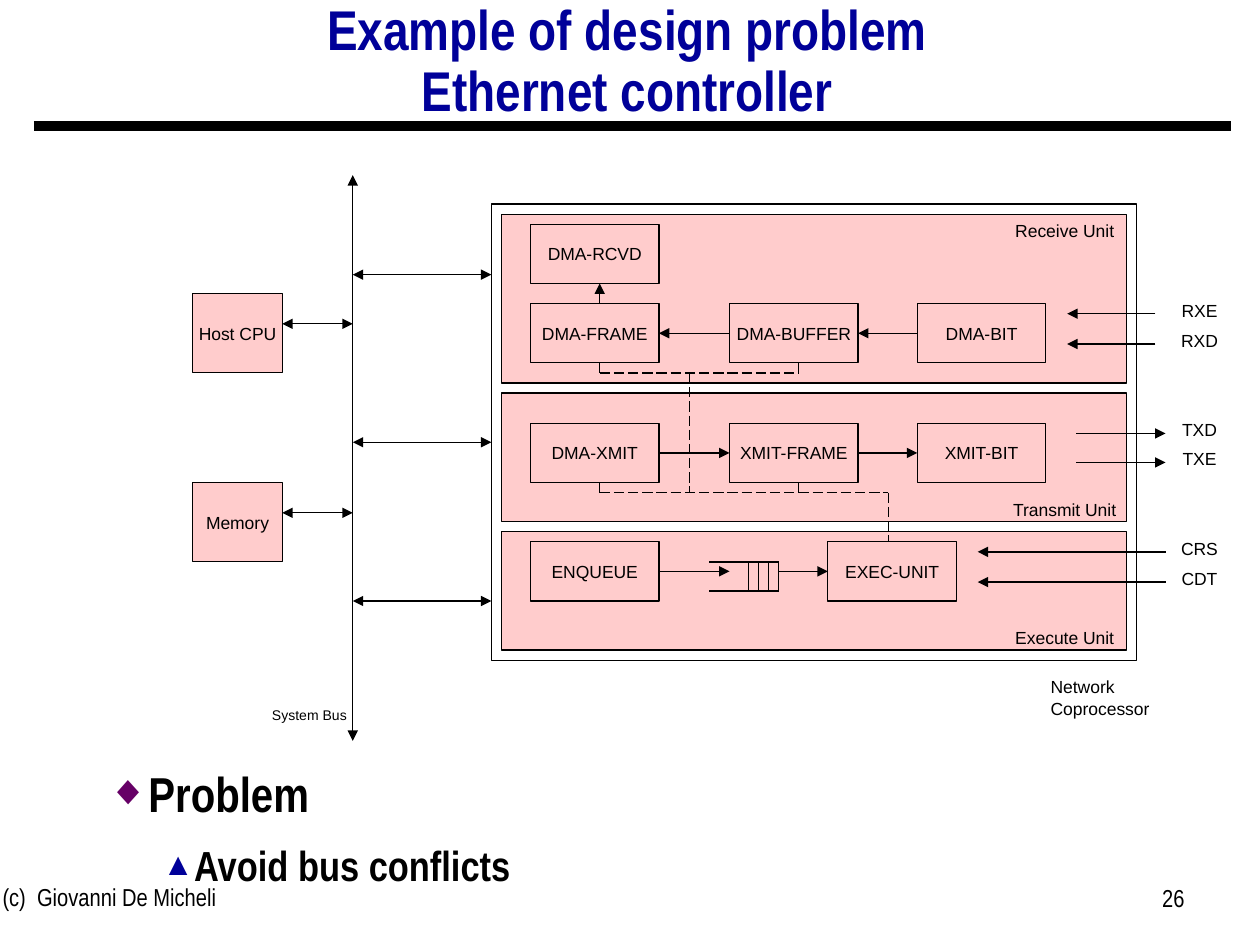
from lxml import etree
from pptx import Presentation
from pptx.dml.color import RGBColor
from pptx.enum.dml import MSO_LINE
from pptx.enum.shapes import MSO_CONNECTOR, MSO_SHAPE
from pptx.enum.text import MSO_ANCHOR, MSO_AUTO_SIZE, PP_ALIGN
from pptx.oxml.ns import qn
from pptx.util import Inches, Pt

LEFT, CENTER, RIGHT = PP_ALIGN.LEFT, PP_ALIGN.CENTER, PP_ALIGN.RIGHT
TOP, MIDDLE = MSO_ANCHOR.TOP, MSO_ANCHOR.MIDDLE
BLACK, NAVY, PURPLE, PINK = "000000", "000099", "660066", "FFCCCC"

TITLE = "Example of design problem\vEthernet controller"
BULLETS = [  # text, level, size, line spacing, space before, margin, hang, mark, mark colour, mark %
    ("Problem", 0, 28, 1.25, 8.4, 0.31, 0.31, "◆", PURPLE, 85),
    ("Avoid bus conflicts", 1, 24, 1.1, 7.2, 0.69, 0.25, "▲", NAVY, 75),
]

COPROCESSOR = (3.9, 1.62, 5.12, 3.62)
UNIT_LEFT, UNIT_WIDTH = 3.98, 4.96
UNITS = [  # name, top, height, label top
    ("Receive Unit", 1.7, 1.34, 1.7),
    ("Transmit Unit", 3.12, 1.02, 3.91),
    ("Execute Unit", 4.22, 0.94, 4.93),
]
COLUMNS = [4.21, 5.79, 7.28]
EXEC_LEFT = 6.57
BLOCK_WIDTH, BLOCK_HEIGHT = 1.02, 0.47
RECEIVE_ROW, TRANSMIT_ROW, EXECUTE_ROW = 2.41, 3.36, 4.3
BLOCKS = {
    "DMA-RCVD": (COLUMNS[0], 1.78),
    "DMA-FRAME": (COLUMNS[0], RECEIVE_ROW),
    "DMA-BUFFER": (COLUMNS[1], RECEIVE_ROW),
    "DMA-BIT": (COLUMNS[2], RECEIVE_ROW),
    "DMA-XMIT": (COLUMNS[0], TRANSMIT_ROW),
    "XMIT-FRAME": (COLUMNS[1], TRANSMIT_ROW),
    "XMIT-BIT": (COLUMNS[2], TRANSMIT_ROW),
    "ENQUEUE": (COLUMNS[0], EXECUTE_ROW),
    "EXEC-UNIT": (EXEC_LEFT, EXECUTE_ROW),
}
FLOWS = [("DMA-BUFFER", "DMA-FRAME"), ("DMA-BIT", "DMA-BUFFER"),
         ("DMA-XMIT", "XMIT-FRAME"), ("XMIT-FRAME", "XMIT-BIT")]
HOSTS = {"Host CPU": 2.33, "Memory": 3.83}
HOST_LEFT, HOST_WIDTH, HOST_HEIGHT = 1.53, 0.71, 0.63
BUS_X, BUS_TOP, BUS_BOTTOM = 2.8, 1.39, 5.88
BUS_TAPS = [2.18, 3.51, 4.77]
SIGNALS = [  # name, y, arrow start, arrow end
    ("RXE", 2.49, 9.17, 8.47), ("RXD", 2.73, 9.17, 8.47),
    ("TXD", 3.44, 8.54, 9.25), ("TXE", 3.67, 8.54, 9.25),
    ("CRS", 4.38, 9.25, 7.76), ("CDT", 4.62, 9.25, 7.76),
]
QUEUE_LEFT, QUEUE_RIGHT, QUEUE_TOP, QUEUE_BOTTOM = 5.63, 6.18, 4.46, 4.69
SLOT_WIDTH, SLOT_BARS = 0.08, 4
PORT_OFFSET, CONTROL_GAP = 0.55, 0.08

deck = Presentation()
deck.slide_width, deck.slide_height = Inches(10), Inches(7.5)
page = deck.slides.add_slide(deck.slide_layouts[1])


def color(value):
    return RGBColor.from_string(value)


def place(shape, left, top, width, height):
    for name, value in dict(left=left, top=top, width=width, height=height).items():
        setattr(shape, name, Inches(value))


def set_frame(frame, anchor=TOP, across=0.1, down=0.05):
    settings = dict(word_wrap=True, auto_size=MSO_AUTO_SIZE.NONE, vertical_anchor=anchor,
                    margin_left=Inches(across), margin_right=Inches(across),
                    margin_top=Inches(down), margin_bottom=Inches(down))
    for name, value in settings.items():
        setattr(frame, name, value)


def write(para, text, size, font="Arial", fill=BLACK, bold=False, align=LEFT):
    para.text = text
    para.alignment = align
    for span in para.runs:
        for name, value in dict(size=Pt(size), name=font, bold=bold).items():
            setattr(span.font, name, value)
        span.font.color.rgb = color(fill)


def add_label(text, left, top, width, height=0.27, size=10, across=0.1, **style):
    box = page.shapes.add_textbox(0, 0, 0, 0)
    place(box, left, top, width, height)
    set_frame(box.text_frame, across=across)
    write(box.text_frame.paragraphs[0], text, size, **style)


def add_box(left, top, width, height, fill=None, text=""):
    box = page.shapes.add_shape(MSO_SHAPE.RECTANGLE, 0, 0, 0, 0)
    place(box, left, top, width, height)
    box.shadow.inherit = False
    if fill:
        box.fill.solid()
        box.fill.fore_color.rgb = color(fill)
    else:
        box.fill.background()
    box.line.color.rgb = color(BLACK)
    box.line.width = Pt(0.75)
    if text:
        set_frame(box.text_frame, MIDDLE, 0, 0)
        write(box.text_frame.paragraphs[0], text, 10, align=CENTER)


def add_line(x1, y1, x2, y2, ends=(), dashed=False, width=0.75):
    """ends names the arrowheads: headEnd at the start, tailEnd at the finish."""
    line = page.shapes.add_connector(MSO_CONNECTOR.STRAIGHT, *map(Inches, (x1, y1, x2, y2)))
    line.line.color.rgb = color(BLACK)
    line.line.width = Pt(width)
    if dashed:
        line.line.dash_style = MSO_LINE.LONG_DASH
    outline = line.line._get_or_add_ln()
    for end in ends:
        etree.SubElement(outline, qn("a:" + end), type="triangle")
    etree.SubElement(line._element.spPr, qn("a:effectLst"))


def add_bullet(para, mark, fill, percent, margin, hang):
    props = para._p.get_or_add_pPr()
    props.set("marL", str(Inches(margin)))
    props.set("indent", str(-Inches(hang)))
    tint = etree.SubElement(props, qn("a:buClr"))
    etree.SubElement(tint, qn("a:srgbClr"), val=fill)
    etree.SubElement(props, qn("a:buSzPct"), val=str(percent * 1000))
    etree.SubElement(props, qn("a:buFont"), typeface="Arial")
    etree.SubElement(props, qn("a:buChar"), char=mark)


ONE_WAY, TWO_WAY = ("tailEnd",), ("headEnd", "tailEnd")

# Title, bullets and footer
title, body = page.shapes.title, page.placeholders[1]
place(title, 0.73, 0, 8.5, 1)
set_frame(title.text_frame, MIDDLE)
heading = title.text_frame.paragraphs[0]
write(heading, TITLE, 32, "Arial Narrow", NAVY, True, CENTER)
heading.line_spacing = 0.9
add_line(0.27, 1, 9.77, 1, width=6)

place(body, 0.75, 5.89, 8.5, 1.28)
set_frame(body.text_frame)
for index, (text, level, size, spacing, before, margin, hang, mark, tint, percent) in enumerate(BULLETS):
    para = body.text_frame.add_paragraph() if index else body.text_frame.paragraphs[0]
    write(para, text, size, "Arial Narrow", bold=True)
    para.level, para.line_spacing, para.space_before = level, spacing, Pt(before)
    add_bullet(para, mark, tint, percent, margin, hang)

add_label("(c)  Giovanni De Micheli", 0, 6.95, 3.09, 0.52, 14, across=0.02, font="Arial Narrow")
add_label("26", 7.17, 6.96, 2.33, 0.52, 14, font="Arial Narrow", align=RIGHT)

# Coprocessor, its units and blocks
add_box(*COPROCESSOR)
add_label("Network Coprocessor", 8.24, 5.32, 1.1, 0.43)
for name, top, height, label_top in UNITS:
    add_box(UNIT_LEFT, top, UNIT_WIDTH, height, PINK)
    add_label(name, 7.85, label_top, 1.2, align=CENTER)
for name, (left, top) in BLOCKS.items():
    add_box(left, top, BLOCK_WIDTH, BLOCK_HEIGHT, text=name)

# Data flow between blocks
ports = [left + PORT_OFFSET for left in COLUMNS[:2]]
add_line(ports[0], RECEIVE_ROW, ports[0], BLOCKS["DMA-RCVD"][1] + BLOCK_HEIGHT, ONE_WAY)
for source, target in FLOWS:
    (start, top), (end, _) = BLOCKS[source], BLOCKS[target]
    y = top + BLOCK_HEIGHT / 2
    if start < end:
        add_line(start + BLOCK_WIDTH, y, end, y, ONE_WAY)
    else:
        add_line(start, y, end + BLOCK_WIDTH, y, ONE_WAY)

# Control lines below the receive and transmit rows
trunk, exec_port = sum(ports) / 2 - 0.08, EXEC_LEFT + 0.48
control = []
for row, end in ((RECEIVE_ROW, ports[1]), (TRANSMIT_ROW, exec_port)):
    bottom = row + BLOCK_HEIGHT
    control.append(bottom + CONTROL_GAP)
    for port in ports:
        add_line(port, bottom, port, control[-1])
    add_line(ports[0], control[-1], end, control[-1], dashed=True)
add_line(trunk, control[0], trunk, control[1], dashed=True)
add_line(exec_port, control[1], exec_port, EXECUTE_ROW, dashed=True)

# Queue
for y in (QUEUE_TOP, QUEUE_BOTTOM):
    add_line(QUEUE_LEFT, y, QUEUE_RIGHT, y)
for slot in range(SLOT_BARS):
    x = QUEUE_RIGHT - slot * SLOT_WIDTH
    add_line(x, QUEUE_TOP, x, QUEUE_BOTTOM)
queue_y = EXECUTE_ROW + BLOCK_HEIGHT / 2
add_line(COLUMNS[0] + BLOCK_WIDTH, queue_y, COLUMNS[1], queue_y, ONE_WAY)
add_line(QUEUE_RIGHT, queue_y, EXEC_LEFT, queue_y, ONE_WAY)

# System bus, hosts and outside signals
add_line(BUS_X, BUS_BOTTOM, BUS_X, BUS_TOP, TWO_WAY)
add_label("System Bus", 2.06, 5.56, 0.85, 0.23, 8)
for y in BUS_TAPS:
    add_line(COPROCESSOR[0], y, BUS_X, y, TWO_WAY)
for name, top in HOSTS.items():
    add_box(HOST_LEFT, top, HOST_WIDTH, HOST_HEIGHT, PINK, name)
    add_line(BUS_X, top + 0.24, HOST_LEFT + HOST_WIDTH, top + 0.24, TWO_WAY)
for name, y, start, end in SIGNALS:
    add_line(start, y, end, y, ONE_WAY)
    add_label(name, 9.17, y - 0.16, 0.7, align=CENTER)

deck.save("out.pptx")
